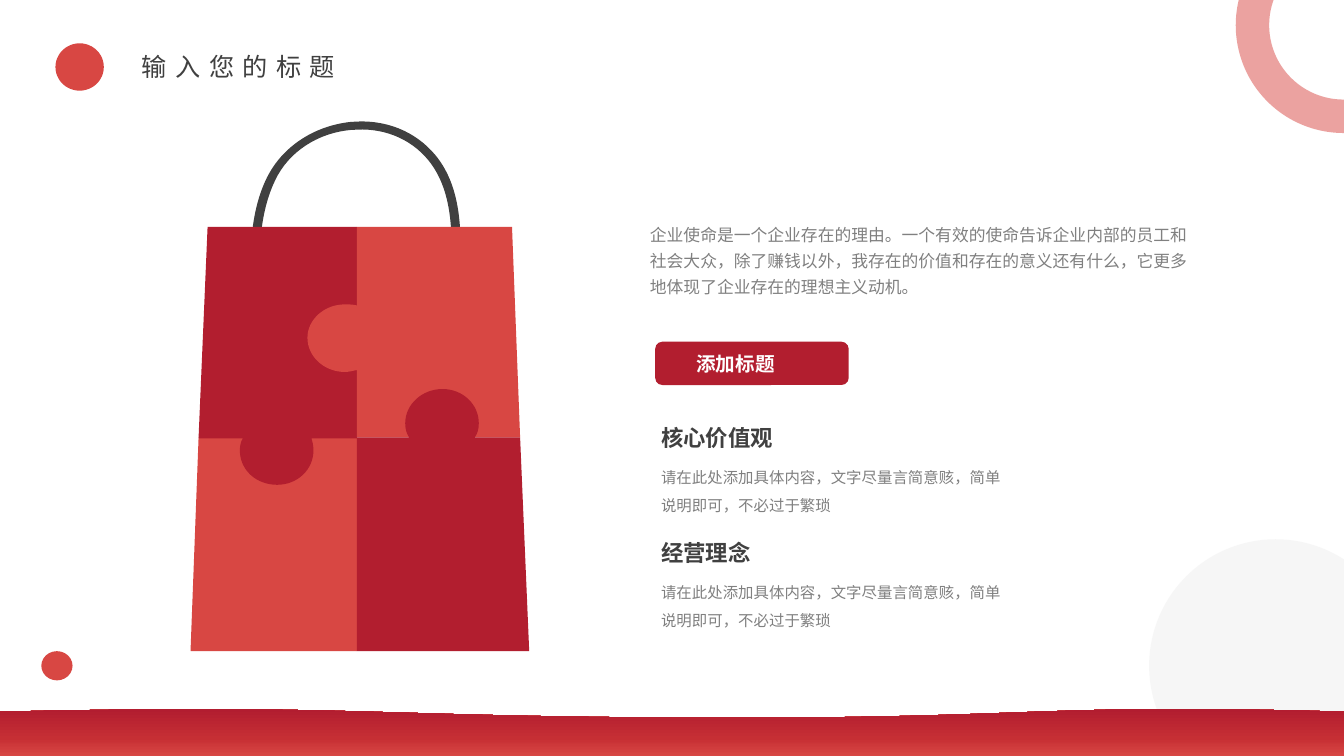
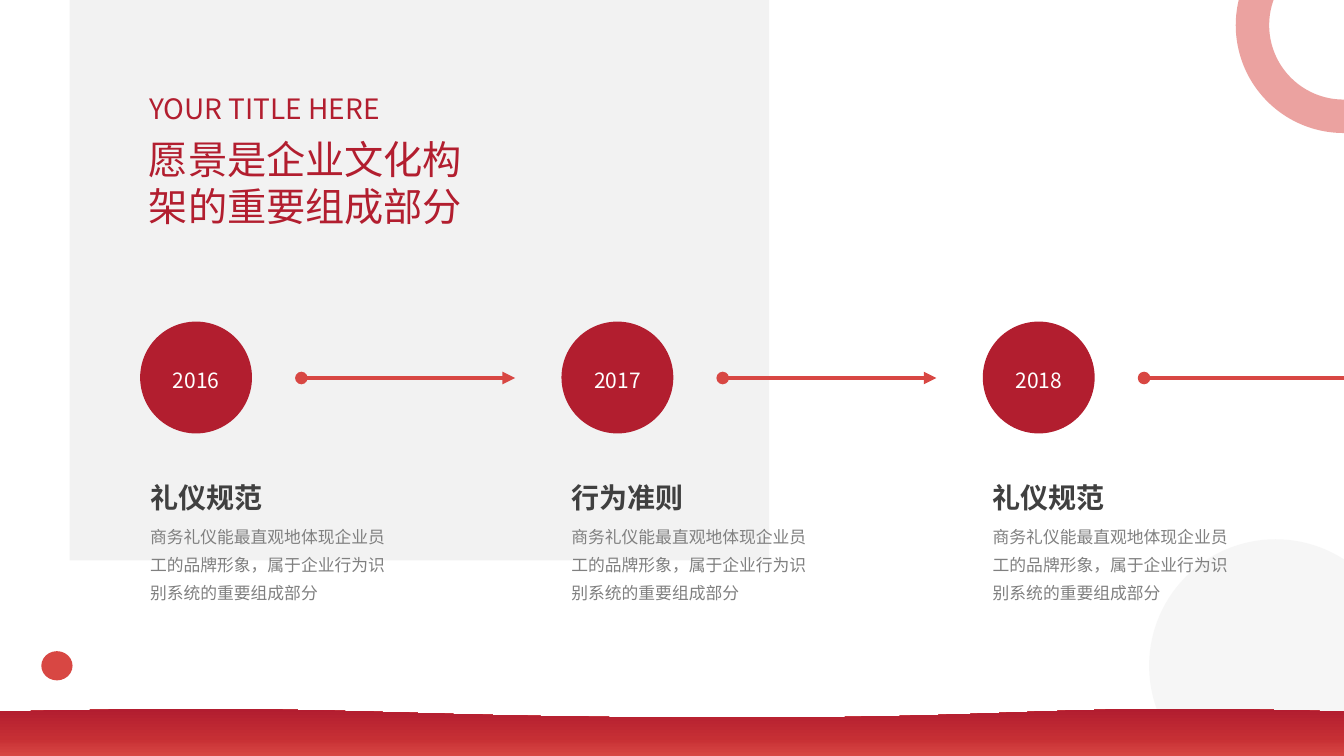
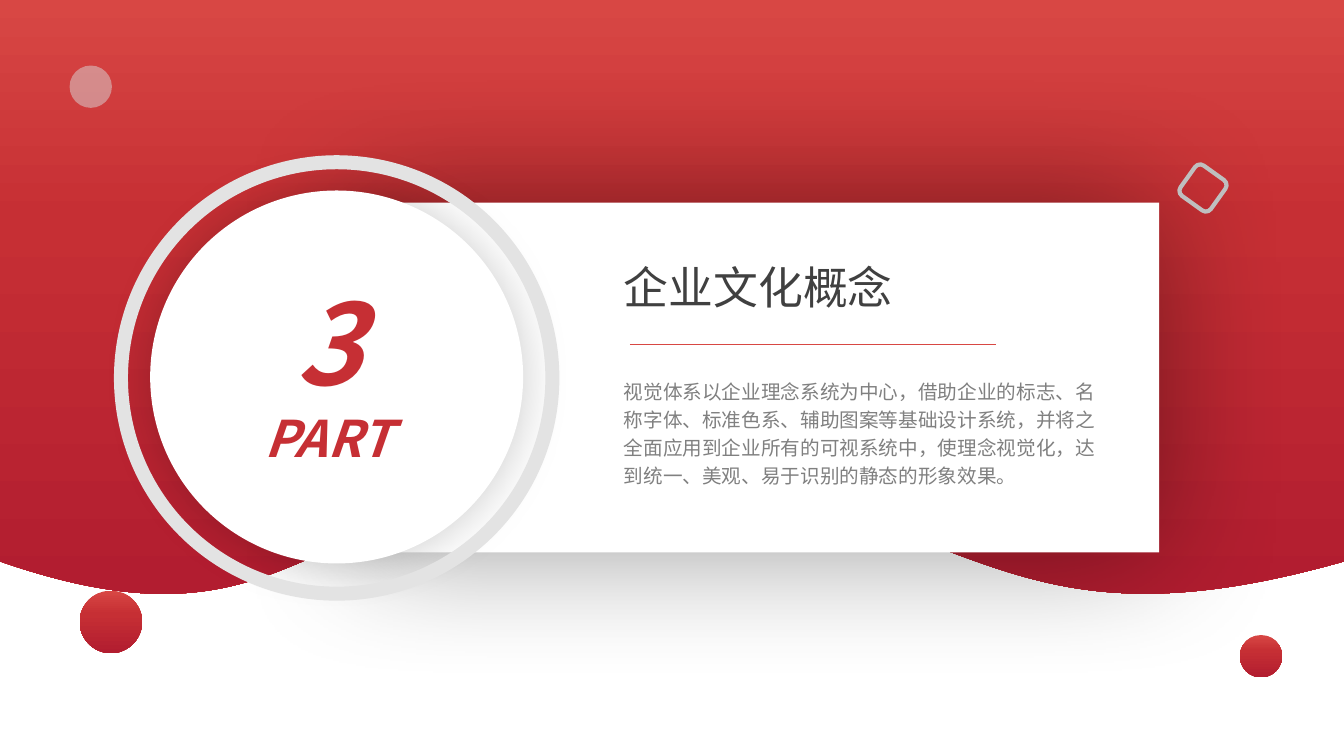
from lxml import etree
from pptx import Presentation
from pptx.dml.color import RGBColor
from pptx.enum.shapes import MSO_CONNECTOR, MSO_SHAPE
from pptx.enum.text import MSO_AUTO_SIZE, PP_ALIGN
from pptx.oxml.ns import qn
from pptx.util import Inches, Pt

OVAL, RECT = MSO_SHAPE.OVAL, MSO_SHAPE.RECTANGLE
ROUND_RECT, DONUT = MSO_SHAPE.ROUNDED_RECTANGLE, MSO_SHAPE.DONUT
STRAIGHT = MSO_CONNECTOR.STRAIGHT
CENTER = PP_ALIGN.CENTER
FIT = MSO_AUTO_SIZE.SHAPE_TO_FIT_TEXT

# Shared style
WIDTH, HEIGHT = 40 / 3, 7.5
FONT = "Noto Sans CJK SC"
RED, CRIMSON, MID_RED = "D84743", "B21E2F", "C62F34"
DARK, GRAY, SILVER, WHITE = "404040", "808080", "D9D9D9", "FFFFFF"
GRADIENT = [(0, "D84744"), (37, MID_RED), (100, "B21D30")]
TOP_DOWN, BOTTOM_UP = 270, 90


def rgb(color):
    return RGBColor.from_string(color)


def add_xml(parent, tag, **attrs):
    return etree.SubElement(parent, qn(tag), {k: str(v) for k, v in attrs.items()})


def flatten(points, steps=24):
    """Points along an outline of (x, y) corners and (x1, y1, x2, y2, x, y) curves."""
    result = []
    for point in points:
        if len(point) == 2:
            result.append(point)
            continue
        start = result[-1]
        c1, c2, end = point[:2], point[2:4], point[4:]
        for i in range(1, steps + 1):
            t = i / steps
            u = 1 - t
            result.append(tuple(
                u**3 * a + 3 * u * u * t * b + 3 * u * t * t * c + t**3 * d
                for a, b, c, d in zip(start, c1, c2, end)))
    return result


class Deck:
    def __init__(self):
        self.prs = Presentation()
        self.prs.slide_width, self.prs.slide_height = Inches(WIDTH), Inches(HEIGHT)
        self.s = None

    def new_slide(self):
        self.s = self.prs.slides.add_slide(self.prs.slide_layouts[6])

    def paint(self, sp, fill=None, alpha=None, angle=TOP_DOWN, line=None, shadow=None):
        """Fill is a hex string, a list of gradient stops or None."""
        spPr = sp._element.spPr
        if fill is None:
            sp.fill.background()
        elif isinstance(fill, str):
            sp.fill.solid()
            sp.fill.fore_color.rgb = rgb(fill)
            if alpha:
                color = spPr.find(qn("a:solidFill")).find(qn("a:srgbClr"))
                add_xml(color, "a:alpha", val=alpha * 1000)
        else:
            sp.fill.gradient()
            sp.fill.gradient_angle = angle
            stops = spPr.find(qn("a:gradFill")).find(qn("a:gsLst"))
            stops.clear()
            for pos, color in fill:
                add_xml(add_xml(stops, "a:gs", pos=pos * 1000), "a:srgbClr", val=color)
        if line:
            sp.line.color.rgb, sp.line.width = rgb(line[0]), Pt(line[1])
        else:
            sp.line.fill.background()
        sp.shadow.inherit = False
        if shadow:
            alpha, blur = shadow
            outer = add_xml(spPr.find(qn("a:effectLst")), "a:outerShdw",
                            blurRad=Pt(blur), dist=0, dir=0, algn="ctr", rotWithShape=0)
            add_xml(add_xml(outer, "a:srgbClr", val="000000"), "a:alpha", val=alpha * 1000)
        return sp

    def shape(self, kind, x, y, w, h, fill=None, **style):
        sp = self.s.shapes.add_shape(kind, Inches(x), Inches(y), Inches(w), Inches(h))
        return self.paint(sp, fill, **style)

    def free(self, points, fill, **style):
        # The flattened outline gives the frame, then real curves replace its segments
        pts = [(Inches(x), Inches(y)) for x, y in flatten(points)]
        builder = self.s.shapes.build_freeform(*pts[0])
        builder.add_line_segments(pts[1:], close=True)
        sp = builder.convert_to_shape()
        outline = next(sp._element.iter(qn("a:path")))
        for segment in list(outline):
            outline.remove(segment)
        for i, point in enumerate(points):
            tag = "a:cubicBezTo" if len(point) == 6 else "a:lnTo" if i else "a:moveTo"
            segment = add_xml(outline, tag)
            for x, y in zip(point[::2], point[1::2]):
                add_xml(segment, "a:pt", x=Inches(x) - sp.left, y=Inches(y) - sp.top)
        add_xml(outline, "a:close")
        return self.paint(sp, fill, **style)

    def line(self, x1, x2, y, color, width, arrow=False):
        cn = self.s.shapes.add_connector(STRAIGHT, Inches(x1), Inches(y), Inches(x2), Inches(y))
        cn.line.color.rgb, cn.line.width = rgb(color), Pt(width)
        if arrow:
            ln = cn.line._get_or_add_ln()
            add_xml(ln, "a:headEnd", type="oval")
            add_xml(ln, "a:tailEnd", type="triangle")
        add_xml(cn._element.spPr, "a:effectLst")

    def text(self, x, y, w, h, lines, color, wrap=True, side=0.1, track=0,
             align=None, spacing=None, **font):
        """Lines are (text, size) pairs, one paragraph each."""
        tf = self.s.shapes.add_textbox(Inches(x), Inches(y), Inches(w), Inches(h)).text_frame
        frame = {"word_wrap": wrap, "auto_size": FIT,
                 "margin_left": Inches(side), "margin_right": Inches(side)}
        for name, value in frame.items():
            setattr(tf, name, value)
        for i, (content, size) in enumerate(lines):
            p = tf.add_paragraph() if i else tf.paragraphs[0]
            p.alignment, p.line_spacing = align, spacing
            r = p.add_run()
            r.text = content
            for name, value in {"name": FONT, "size": Pt(size), **font}.items():
                setattr(r.font, name, value)
            r.font.color.rgb = rgb(color)
            rPr = r.font._element
            if track:
                rPr.set("spc", str(track * 100))
            add_xml(rPr, "a:ea", typeface=FONT)

    def backdrop(self):
        """Corner circles and the wavy bottom band of a content slide."""
        self.shape(OVAL, 11.4, 5.35, 2.51, 2.51, SILVER, alpha=21)
        ring = self.shape(DONUT, 12.26, -0.82, 2.14, 2.14, RED, alpha=50)
        ring.adjustments[0] = 0.155
        self.free([(WIDTH, HEIGHT), (7.33, HEIGHT), (0, HEIGHT), (0, 7.06),
                   (3.67, 6.98, 3.67, 7.12, 7.33, 7.12), (7.61, 7.12),
                   (10.34, 7.11, 10.43, 6.98, WIDTH, 7.06)],
                  GRADIENT, angle=BOTTOM_UP)
        self.shape(OVAL, 0.41, 6.46, 0.31, 0.29, RED)


def bag_slide(deck):
    deck.new_slide()
    deck.backdrop()
    deck.shape(OVAL, 0.55, 0.43, 0.48, 0.47, RED)
    deck.text(1.31, 0.46, 2.22, 0.4, [("输入您的标题", 18)], DARK, wrap=False, track=6)

    # Bag handle, left and right half
    deck.free([(3.48, 1.21), (3.11, 1.25, 2.8, 1.46, 2.65, 1.76),
               (2.48, 2.1, 2.48, 2.51, 2.48, 2.84), (2.57, 2.84),
               (2.57, 2.52, 2.57, 2.12, 2.73, 1.79), (2.86, 1.51, 3.15, 1.32, 3.48, 1.29),
               (3.49, 1.29), (3.49, 1.21)], DARK)
    deck.free([(4.32, 1.54), (4.12, 1.3, 3.82, 1.18, 3.49, 1.21), (3.49, 1.29),
               (3.79, 1.26, 4.07, 1.37, 4.25, 1.59), (4.51, 1.91, 4.49, 2.38, 4.47, 2.8),
               (4.47, 3.09), (4.55, 3.09), (4.55, 3, 4.55, 2.9, 4.56, 2.8),
               (4.58, 2.37, 4.6, 1.88, 4.32, 1.54)], DARK)

    # Puzzle pieces: bottom left, top left, top right, bottom right
    deck.free([(3.61, 5.2), (3.59, 5.2, 3.56, 5.21, 3.54, 5.21), (3.54, 4.34), (1.97, 4.34),
               (1.89, 6.46), (3.54, 6.46), (3.54, 5.87), (3.56, 5.87, 3.59, 5.87, 3.61, 5.87),
               (3.82, 5.87, 3.98, 5.72, 3.98, 5.54), (3.98, 5.35, 3.82, 5.2, 3.61, 5.2)], RED)
    deck.free([(3.54, 2.25), (2.06, 2.25), (1.97, 4.35), (2.41, 4.35),
               (2.39, 4.38, 2.38, 4.42, 2.38, 4.47), (2.38, 4.66, 2.54, 4.81, 2.75, 4.81),
               (2.95, 4.81, 3.11, 4.66, 3.11, 4.47), (3.11, 4.42, 3.1, 4.38, 3.09, 4.35),
               (3.54, 4.35)], CRIMSON)
    deck.free([(5.16, 4.34), (5.08, 2.25), (3.54, 2.25), (3.54, 3.03),
               (3.5, 3.02, 3.46, 3.02, 3.42, 3.02), (3.22, 3.02, 3.05, 3.17, 3.05, 3.35),
               (3.05, 3.54, 3.22, 3.69, 3.42, 3.69), (3.46, 3.69, 3.5, 3.68, 3.54, 3.67),
               (3.54, 4.34)], RED)
    deck.free([(5.16, 4.34), (4.71, 4.34), (4.74, 4.3, 4.75, 4.25, 4.75, 4.2),
               (4.75, 4.01, 4.59, 3.86, 4.39, 3.86), (4.19, 3.86, 4.02, 4.01, 4.02, 4.2),
               (4.02, 4.25, 4.03, 4.3, 4.06, 4.34), (3.54, 4.34), (3.54, 6.46),
               (5.25, 6.46)], CRIMSON)

    # Mission text and button
    deck.text(6.35, 2.12, 5.6, 1.13, [(
        "企业使命是一个企业存在的理由。一个有效的使命告诉企业内部的员工和社会大众，除了赚钱以外，"
        "我存在的价值和存在的意义还有什么，它更多地体现了企业存在的理想主义动机。", 12)],
        GRAY, spacing=1.3)
    deck.shape(ROUND_RECT, 6.5, 3.39, 1.92, 0.43, CRIMSON)
    deck.text(6.81, 3.44, 1.33, 0.34, [("添加标题", 14)], WHITE, bold=True)

    # Headed notes
    note = "请在此处添加具体内容，文字尽量言简意赅，简单说明即可，不必过于繁琐"
    for i, (heading, width) in enumerate([("核心价值观", 2.65), ("经营理念", 1.19)]):
        y = 4.16 + 1.14 * i
        deck.text(6.46, y + 0.34, 3.68, 0.63, [(note, 11)], GRAY, spacing=Pt(20))
        deck.text(6.46, y, width, 0.37, [(heading, 16)], DARK, bold=True)


def timeline_slide(deck):
    deck.new_slide()
    deck.backdrop()
    deck.shape(RECT, 0.69, 0, 6.94, 5.56, "F2F2F2")

    # Milestones
    note = "商务礼仪能最直观地体现企业员工的品牌形象，属于企业行为识别系统的重要组成部分"
    milestones = [("2016", "礼仪规范"), ("2017", "行为准则"), ("2018", "礼仪规范")]
    for i, (year, heading) in enumerate(milestones):
        x = 1.39 + 4.18 * i
        deck.text(x, 5.1, 2.66, 0.91, [(note, 12)], GRAY, spacing=Pt(20))
        deck.text(x, 4.72, 2.12, 0.44, [(heading, 20)], DARK, bold=True)
        deck.shape(OVAL, x, 3.19, 1.11, 1.11, CRIMSON)
        deck.text(x, 3.6, 1.11, 0.35, [(year, 15)], WHITE, side=0.03, align=CENTER)
        deck.line(x + 1.6, x + 3.72, 3.75, RED, 3, arrow=True)

    # Title
    deck.text(1.38, 1.29, 3.63, 1.51, [("愿景是企业文化构架的重要组成部分", 28)], CRIMSON)
    deck.text(1.38, 0.86, 3.48, 0.34, [("YOUR TITLE HERE", 20)], CRIMSON)


def section_slide(deck):
    deck.new_slide()
    # Wave and white card
    deck.free([(0, 0), (6, 0), (WIDTH, 0), (WIDTH, 5.57), (9.67, 6.61, 9.67, 4.78, 6, 4.78),
               (5.73, 4.79), (3, 4.9, 2.91, 6.58, 0, 5.57)], GRADIENT)
    deck.shape(RECT, 3.59, 2.01, 7.91, 3.47, WHITE, shadow=(40, 98))

    # Small ornaments
    for x, y, size in [(0.79, 5.86, 0.62), (12.3, 6.3, 0.42)]:
        deck.shape(OVAL, x, y, size, size, GRADIENT)
    diamond = deck.shape(ROUND_RECT, 11.75, 1.68, 0.37, 0.37, line=("BFBFBF", 3))
    diamond.rotation = 305.6
    deck.shape(OVAL, 0.69, 0.65, 0.42, 0.42, SILVER, alpha=50)

    # Part badge
    deck.shape(OVAL, 1.49, 1.89, 3.7, 3.7, WHITE, shadow=(20, 35))
    deck.shape(OVAL, 1.2, 1.61, 4.28, 4.28, line=("E3E3E3", 10))
    deck.text(2.31, 2.66, 1.89, 2.05, [("3", 80), ("PART", 36)], MID_RED,
              align=CENTER, bold=True, italic=True)

    # Section title and summary
    deck.text(6.09, 2.53, 2.89, 0.64, [("企业文化概念", 32)], DARK, wrap=False)
    deck.text(6.09, 3.68, 4.94, 1.2, [(
        "视觉体系以企业理念系统为中心，借助企业的标志、名称字体、标准色系、辅助图案等基础设计系统，"
        "并将之全面应用到企业所有的可视系统中，使理念视觉化，达到统一、美观、易于识别的静态的形象效果。", 14)],
        GRAY, spacing=Pt(20))
    deck.line(6.25, 9.88, 3.42, RED, 1)


def main():
    deck = Deck()
    bag_slide(deck)
    timeline_slide(deck)
    section_slide(deck)
    deck.prs.save("out.pptx")


if __name__ == "__main__":
    main()
